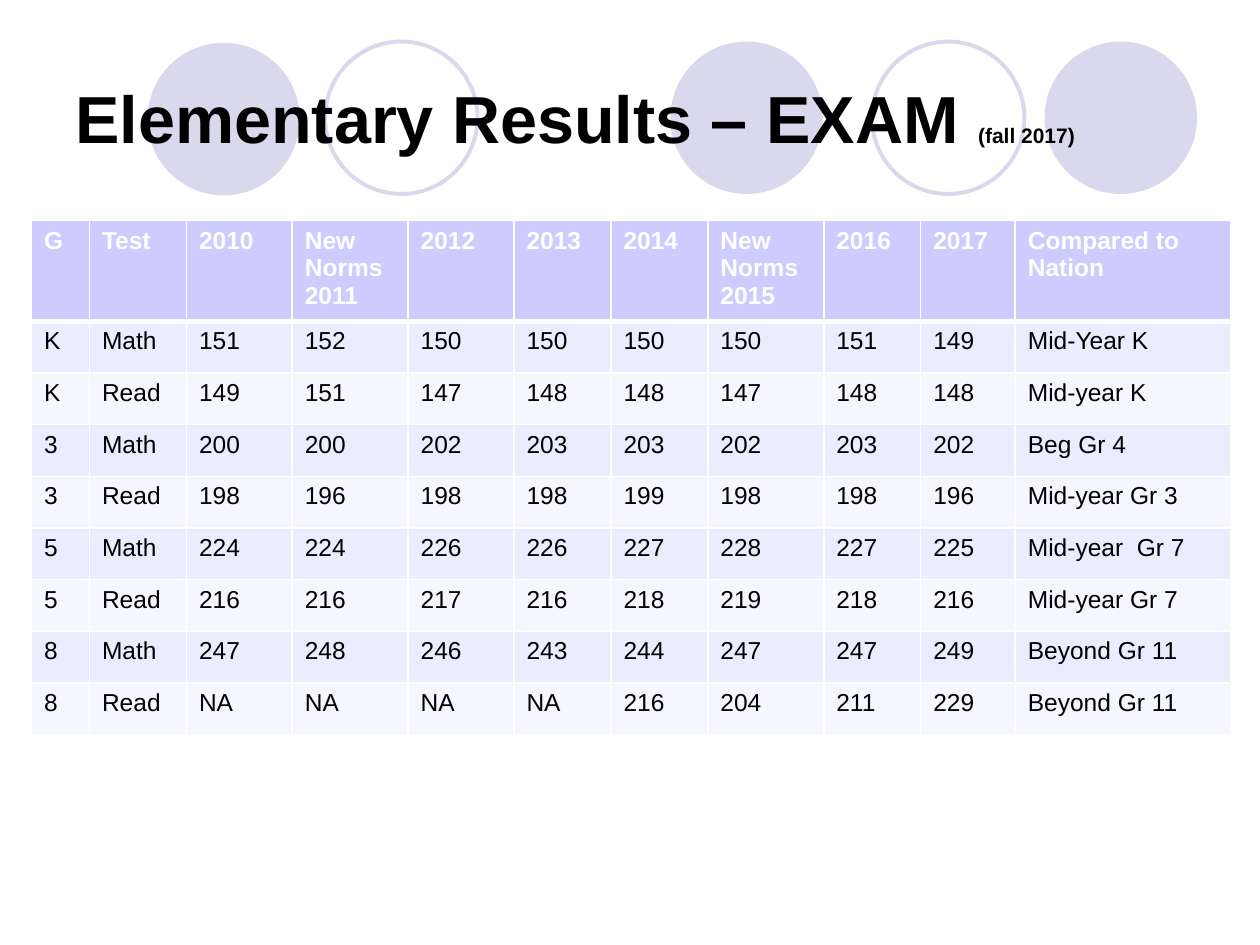
from dataclasses import dataclass

from lxml.etree import SubElement
from pptx import Presentation
from pptx.dml.color import RGBColor
from pptx.enum.shapes import MSO_SHAPE
from pptx.enum.text import MSO_ANCHOR
from pptx.oxml.ns import qn
from pptx.util import Inches, Pt


@dataclass(frozen=True)
class Theme:
    font: str = "Arial"
    ink: str = "000000"
    white: str = "FFFFFF"
    ring: str = "D9D8EC"
    head: str = "CCCCFF"
    bands: tuple = ("ECECFF", "F6F6FF")
    title: int = 38
    note: int = 12
    body: int = 14
    ring_line: float = 2.25
    thin: int = 1
    thick: int = 3


THEME = Theme()
DISCS = [(5.32, 0.33), (8.29, 0.33), (1.17, 0.34)]
RINGS = [(6.92, 0.33), (2.58, 0.33)]
WIDTHS = [0.46, 0.77, 0.84, 0.92, 0.84, 0.77, 0.77, 0.92, 0.77, 0.75, 1.71]
HEIGHTS = [0.47] + [0.41] * 8
RESULTS = [
    ["G", "Test", "2010", "New Norms\n2011", "2012", "2013", "2014",
     "New Norms\n2015", "2016", "2017", "Compared to Nation"],
    ["K", "Math", 151, 152, 150, 150, 150, 150, 151, 149, "Mid-Year K"],
    ["K", "Read", 149, 151, 147, 148, 148, 147, 148, 148, "Mid-year K"],
    ["3", "Math", 200, 200, 202, 203, 203, 202, 203, 202, "Beg Gr 4"],
    ["3", "Read", 198, 196, 198, 198, 199, 198, 198, 196, "Mid-year Gr 3"],
    ["5", "Math", 224, 224, 226, 226, 227, 228, 227, 225, "Mid-year  Gr 7"],
    ["5", "Read", 216, 216, 217, 216, 218, 219, 218, 216, "Mid-year Gr 7"],
    ["8", "Math", 247, 248, 246, 243, 244, 247, 247, 249, "Beyond Gr 11"],
    ["8", "Read", "NA", "NA", "NA", "NA", 216, 204, 211, 229, "Beyond Gr 11"],
]


def write(para, text, size, color=THEME.ink, bold=False):
    """Add one formatted run to a paragraph."""
    run = para.add_run()
    run.text = text
    run.font.name = THEME.font
    run.font.size = Pt(size)
    run.font.bold = bold
    run.font.color.rgb = RGBColor.from_string(color)


def edge(cell, side, width):
    """Draw one white border on a cell."""
    line = SubElement(cell._tc.get_or_add_tcPr(), qn(f"a:ln{side}"), w=str(Pt(width)))
    fill = SubElement(line, qn("a:solidFill"))
    SubElement(fill, qn("a:srgbClr"), val=THEME.white)


class Board:
    """Hold the theme and the current slide."""

    def __init__(self, slide, theme):
        """Keep the slide and its style."""
        self.slide = slide
        self.theme = theme

    def circle(self, left, top, solid):
        """Add a filled disc or an open ring."""
        size = Inches(1.21)
        shape = self.slide.shapes.add_shape(
            MSO_SHAPE.OVAL, Inches(left), Inches(top), size, size)
        shape.shadow.inherit = False
        color = RGBColor.from_string(self.theme.ring)
        if solid:
            shape.fill.solid()
            shape.fill.fore_color.rgb = color
            shape.line.fill.background()
        else:
            shape.fill.background()
            shape.line.color.rgb = color
            shape.line.width = Pt(self.theme.ring_line)

    def title(self, main, note):
        """Add the heading with its small note."""
        box = self.slide.shapes.add_textbox(
            Inches(0.5), Inches(0.3), Inches(9), Inches(1.25))
        frame = box.text_frame
        frame.word_wrap = True
        frame.vertical_anchor = MSO_ANCHOR.MIDDLE
        para = frame.paragraphs[0]
        write(para, main, self.theme.title, bold=True)
        write(para, note, self.theme.note, bold=True)

    def table(self, rows):
        """Add the results table."""
        grid = self.slide.shapes.add_table(
            len(rows), len(WIDTHS), Inches(0.25), Inches(1.75),
            Inches(sum(WIDTHS)), Inches(sum(HEIGHTS))).table
        grid.horz_banding = False
        for col, width in zip(grid.columns, WIDTHS):
            col.width = Inches(width)
        for index, (row, height, values) in enumerate(zip(grid.rows, HEIGHTS, rows)):
            row.height = Inches(height)
            for cell, value in zip(row.cells, values):
                self.cell(cell, str(value), index)

    def cell(self, cell, text, index):
        """Fill, frame and write one table cell."""
        style = self.theme
        head = index == 0
        top = style.thick if index == 1 else style.thin
        base = style.thick if head else style.thin
        for side, width in zip("LRTB", (style.thin, style.thin, top, base)):
            edge(cell, side, width)
        cell.fill.solid()
        cell.fill.fore_color.rgb = RGBColor.from_string(
            style.head if head else style.bands[(index - 1) % 2])
        frame = cell.text_frame
        for order, part in enumerate(text.split("\n")):
            para = frame.add_paragraph() if order else frame.paragraphs[0]
            write(para, part, style.body, bold=head,
                  color=style.white if head else style.ink)


def main():
    """Build and save the slide."""
    deck = Presentation()
    deck.slide_width, deck.slide_height = Inches(10), Inches(7.5)
    board = Board(deck.slides.add_slide(deck.slide_layouts[6]), THEME)
    for spots, solid in ((DISCS, True), (RINGS, False)):
        for left, top in spots:
            board.circle(left, top, solid)
    board.title("Elementary Results – EXAM ", "(fall 2017)")
    board.table(RESULTS)
    deck.save("out.pptx")


if __name__ == "__main__":
    main()
